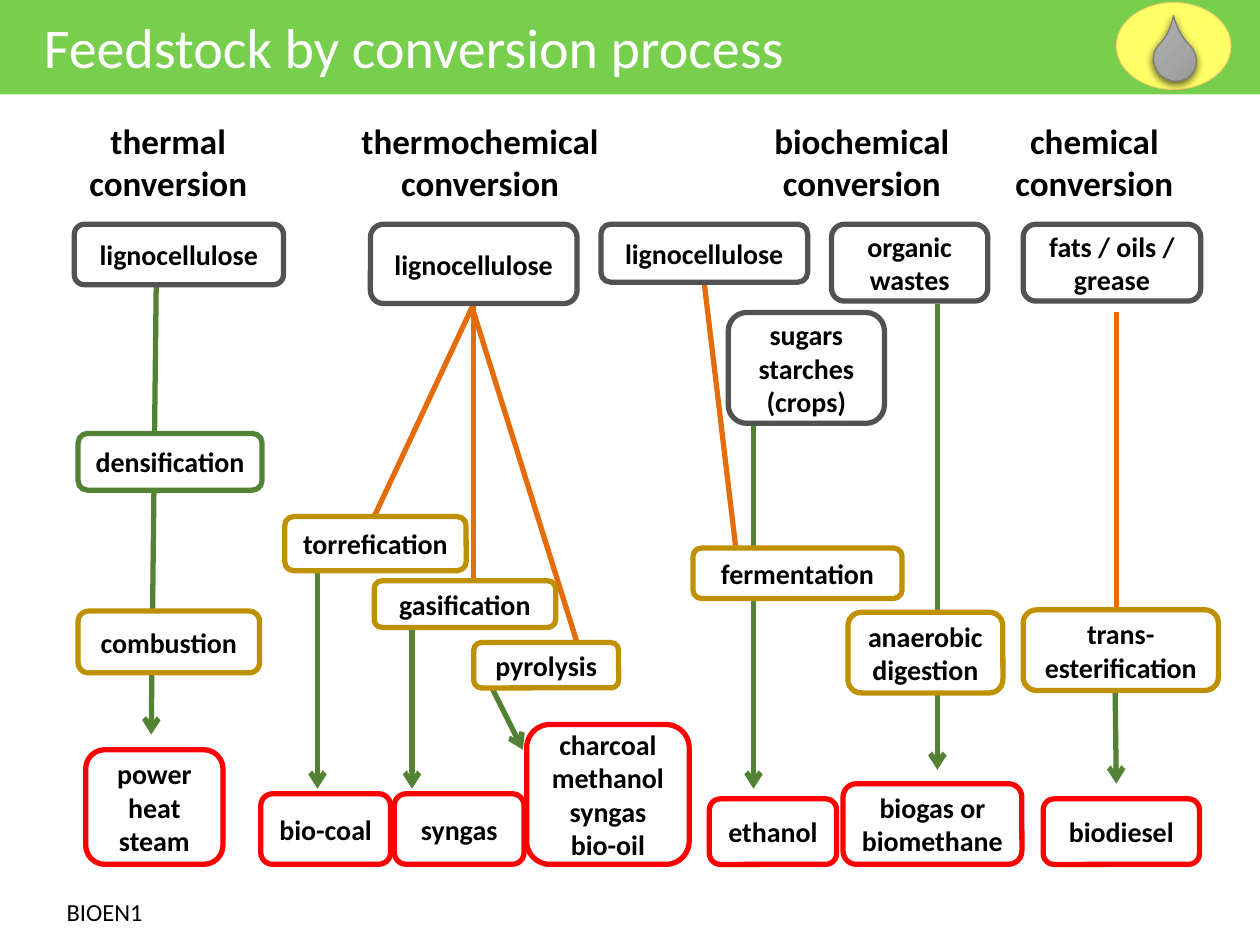
"""Build a slide that maps feedstocks through conversion processes to products."""
import copy
from typing import NamedTuple, Optional

import lxml.etree
import pptx
import pptx.dml.color
import pptx.enum.shapes
import pptx.enum.text
import pptx.oxml.ns
import pptx.util

RGBColor = pptx.dml.color.RGBColor
MSO_SHAPE = pptx.enum.shapes.MSO_SHAPE
PP_ALIGN = pptx.enum.text.PP_ALIGN

EMU_PER_PX = 9144
FONT = "Calibri"
WHITE = RGBColor(0xFF, 0xFF, 0xFF)
BLACK = RGBColor(0x00, 0x00, 0x00)
BANNER_GREEN = RGBColor(0x78, 0xCE, 0x4D)
GREEN = RGBColor(0x54, 0x82, 0x35)
ORANGE = RGBColor(0xE4, 0x6C, 0x0A)
FEEDSTOCK_GRAY = RGBColor(0x52, 0x52, 0x52)
PROCESS_GOLD = RGBColor(0xBF, 0x90, 0x00)
PRODUCT_RED = RGBColor(0xFF, 0x00, 0x00)
BADGE_YELLOW = RGBColor(0xFF, 0xFF, 0x66)
BADGE_EDGE = RGBColor(0xFF, 0xCC, 0x66)
DROP_EDGE = RGBColor(0x7C, 0x7C, 0x7C)
DROP_SHADES = (
    RGBColor(0xAF, 0xAF, 0xAF),
    RGBColor(0xA5, 0xA5, 0xA5),
    RGBColor(0x93, 0x93, 0x93),
)


class Label(NamedTuple):
    text: str
    left: int
    top: int
    width: int
    height: int
    size: int = 20
    color: RGBColor = BLACK
    heading: bool = True


class Box(NamedTuple):
    text: str
    left: int
    top: int
    width: int
    height: int
    edge: RGBColor
    fill: Optional[RGBColor] = None


class Flow(NamedTuple):
    start_x: int
    start_y: int
    end_x: int
    end_y: int
    color: RGBColor = GREEN
    arrow: bool = True


LABELS = [
    Label("Feedstock by conversion process", 25, 5, 733, 64, 32, WHITE, False),
    Label("BIOEN1", 43, 707, 81, 34, 14, BLACK, False),
    Label("thermal\vconversion", 59, 90, 149, 77),
    Label("thermochemical conversion", 271, 90, 220, 77),
    Label("biochemical conversion", 584, 90, 200, 77),
    Label("chemical conversion", 784, 90, 169, 77),
]

FLOWS = [
    Flow(124, 226, 120, 583),
    Flow(376, 241, 297, 410, ORANGE, False),
    Flow(376, 241, 376, 461, ORANGE, False),
    Flow(376, 248, 458, 510, ORANGE, False),
    Flow(252, 418, 252, 626),
    Flow(327, 483, 327, 626),
    Flow(391, 547, 415, 595),
    Flow(559, 225, 584, 435, ORANGE, False),
    Flow(598, 337, 598, 626),
    Flow(744, 241, 744, 611),
    Flow(886, 248, 886, 483, ORANGE, False),
    Flow(885, 547, 886, 622),
]

BOXES = [
    Box("lignocellulose", 59, 178, 166, 48, FEEDSTOCK_GRAY),
    Box("lignocellulose", 294, 178, 164, 63, FEEDSTOCK_GRAY),
    Box("lignocellulose", 477, 178, 164, 46, FEEDSTOCK_GRAY),
    Box("sugars\vstarches\v(crops)", 578, 248, 124, 88, FEEDSTOCK_GRAY),
    Box("organic wastes", 660, 178, 124, 61, FEEDSTOCK_GRAY),
    Box("fats / oils / grease", 812, 178, 141, 61, FEEDSTOCK_GRAY),
    Box("densification", 62, 344, 146, 45, GREEN, WHITE),
    Box("combustion", 62, 485, 144, 49, PROCESS_GOLD, WHITE),
    Box("torrefication", 226, 410, 144, 43, PROCESS_GOLD, WHITE),
    Box("gasification", 297, 461, 144, 37, PROCESS_GOLD, WHITE),
    Box("pyrolysis", 376, 510, 115, 36, PROCESS_GOLD, WHITE),
    Box("fermentation", 550, 435, 166, 40, PROCESS_GOLD, WHITE),
    Box("anaerobic\vdigestion", 673, 486, 123, 64, PROCESS_GOLD, WHITE),
    Box("trans-esterification", 812, 484, 155, 64, PROCESS_GOLD),
    Box("power\vheat\nsteam", 68, 595, 109, 91, PRODUCT_RED),
    Box("bio-coal", 207, 630, 103, 56, PRODUCT_RED),
    Box("syngas", 313, 630, 103, 56, PRODUCT_RED),
    Box("charcoal\nmethanol\nsyngas\nbio-oil", 418, 575, 129, 111, PRODUCT_RED),
    Box("ethanol", 563, 634, 101, 52, PRODUCT_RED),
    Box("biogas or\vbiomethane", 669, 622, 142, 64, PRODUCT_RED),
    Box("biodiesel", 828, 634, 124, 52, PRODUCT_RED),
]


def px(*lengths: int) -> list[pptx.util.Emu]:
    return [pptx.util.Emu(length * EMU_PER_PX) for length in lengths]


def write_text(text_frame, text: str, size: int, color: RGBColor, bold: bool, align) -> None:
    text_frame.text = text
    for paragraph in text_frame.paragraphs:
        paragraph.alignment = align
        for run in paragraph.runs:
            run.font.name = FONT
            run.font.size = pptx.util.Pt(size)
            run.font.bold = bold
            run.font.color.rgb = color


def draw_shape(shapes, kind, left: int, top: int, width: int, height: int,
               fill: Optional[RGBColor], edge: Optional[RGBColor] = None, edge_width: float = 3):
    shape = shapes.add_shape(kind, *px(left, top, width, height))
    shape.shadow.inherit = False
    if fill is None:
        shape.fill.background()
    else:
        shape.fill.solid()
        shape.fill.fore_color.rgb = fill
    if edge is None:
        shape.line.fill.background()
    else:
        shape.line.color.rgb = edge
        shape.line.width = pptx.util.Pt(edge_width)
    return shape


def draw_label(shapes, label: Label) -> None:
    text_box = shapes.add_textbox(*px(label.left, label.top, label.width, label.height))
    text_frame = text_box.text_frame
    text_frame.word_wrap = label.heading
    text_frame.auto_size = pptx.enum.text.MSO_AUTO_SIZE.SHAPE_TO_FIT_TEXT
    align = PP_ALIGN.CENTER if label.heading else PP_ALIGN.LEFT
    write_text(text_frame, label.text, label.size, label.color, label.heading, align)


def draw_box(shapes, box: Box) -> None:
    shape = draw_shape(shapes, MSO_SHAPE.ROUNDED_RECTANGLE, box.left, box.top,
                       box.width, box.height, box.fill, box.edge)
    shape.text_frame.vertical_anchor = pptx.enum.text.MSO_ANCHOR.MIDDLE
    write_text(shape.text_frame, box.text, 16, BLACK, True, PP_ALIGN.CENTER)


def draw_flow(shapes, flow: Flow) -> None:
    connector = shapes.add_connector(
        pptx.enum.shapes.MSO_CONNECTOR.STRAIGHT,
        *px(flow.start_x, flow.start_y, flow.end_x, flow.end_y))
    connector.line.color.rgb = flow.color
    connector.line.width = pptx.util.Pt(3)
    properties = connector.element.spPr
    if flow.arrow:
        line = properties.find(pptx.oxml.ns.qn("a:ln"))
        lxml.etree.SubElement(line, pptx.oxml.ns.qn("a:tailEnd"), type="arrow")
    lxml.etree.SubElement(properties, pptx.oxml.ns.qn("a:effectLst"))


def draw_badge(shapes) -> None:
    group = shapes.add_group_shape()
    draw_shape(group.shapes, MSO_SHAPE.OVAL, 886, 2, 91, 69, BADGE_YELLOW, BADGE_EDGE, 0.5)
    drop = draw_shape(group.shapes, MSO_SHAPE.TEAR, 916, 30, 33, 35, None, DROP_EDGE, 0.75)
    drop.adjustments[0] = 1.465
    drop.rotation = 314.8
    drop.fill.gradient()
    drop.fill.gradient_angle = 270
    properties = drop.element.spPr
    first_stop = next(properties.iter(pptx.oxml.ns.qn("a:gs")))
    first_stop.addnext(copy.deepcopy(first_stop))
    for index, (stop, shade) in enumerate(zip(drop.fill.gradient_stops, DROP_SHADES)):
        stop.position = index / 2
        stop.color.rgb = shade
    effects = properties.find(pptx.oxml.ns.qn("a:effectLst"))
    shadow = lxml.etree.SubElement(effects, pptx.oxml.ns.qn("a:outerShdw"), blurRad="57150",
                                   dist="19050", dir="5400000", algn="ctr", rotWithShape="0")
    color = lxml.etree.SubElement(shadow, pptx.oxml.ns.qn("a:srgbClr"), val=str(BLACK))
    lxml.etree.SubElement(color, pptx.oxml.ns.qn("a:alpha"), val="63000")


def main() -> None:
    presentation = pptx.Presentation()
    presentation.slide_width, presentation.slide_height = px(1000, 750)
    shapes = presentation.slides.add_slide(presentation.slide_layouts[6]).shapes
    draw_shape(shapes, MSO_SHAPE.RECTANGLE, 0, 0, 1001, 75, BANNER_GREEN)
    for draw, items in ((draw_label, LABELS), (draw_flow, FLOWS), (draw_box, BOXES)):
        for item in items:
            draw(shapes, item)
    draw_badge(shapes)
    presentation.save("out.pptx")


if __name__ == "__main__":
    main()
